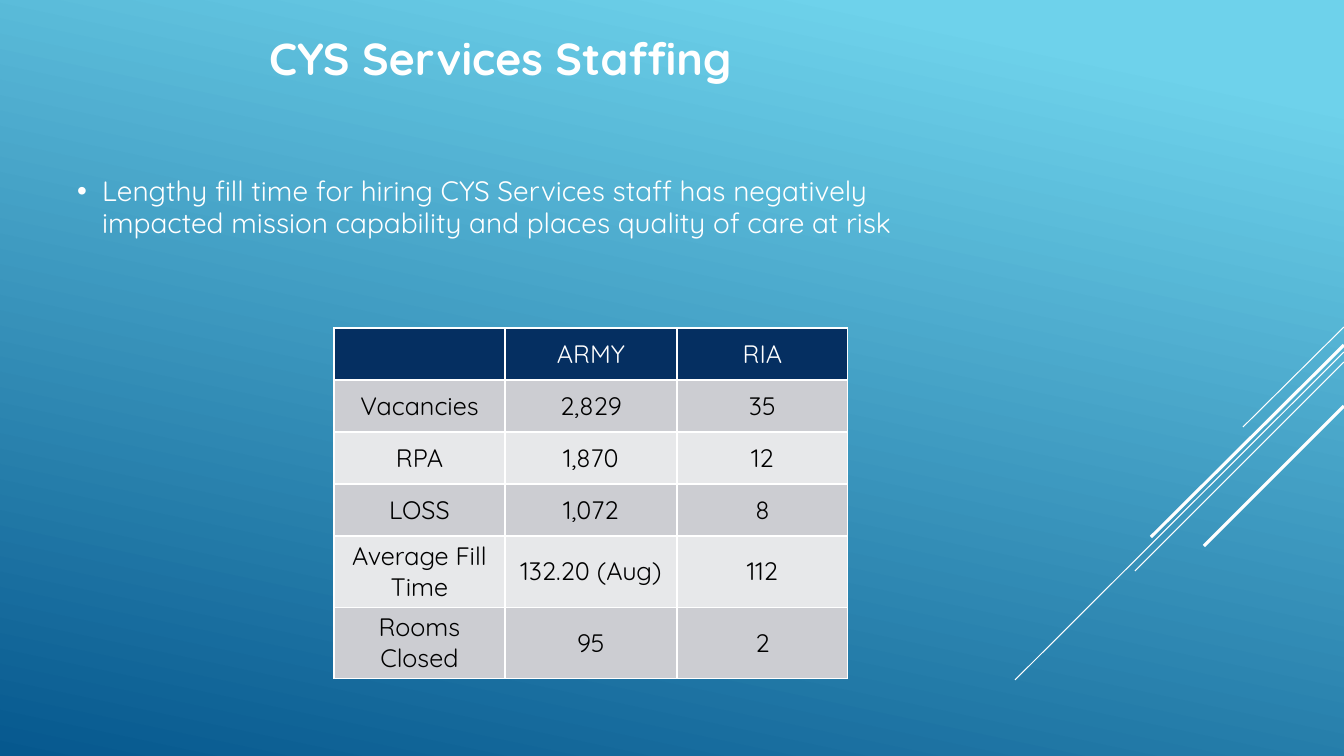
"""Build the staffing slide: title, one bullet, a table and slanted lines."""
from lxml import etree
from pptx import Presentation
from pptx.dml.color import RGBColor
from pptx.enum.shapes import MSO_CONNECTOR
from pptx.enum.text import MSO_ANCHOR, MSO_AUTO_SIZE, PP_ALIGN
from pptx.oxml.ns import qn
from pptx.util import Pt

STRAIGHT = MSO_CONNECTOR.STRAIGHT
MIDDLE, BOTTOM = MSO_ANCHOR.MIDDLE, MSO_ANCHOR.BOTTOM
NO_FIT = MSO_AUTO_SIZE.NONE
CENTER, LEFT = PP_ALIGN.CENTER, PP_ALIGN.LEFT

WHITE = RGBColor(0xFF, 0xFF, 0xFF)
BLACK = RGBColor(0, 0, 0)
NAVY = RGBColor(0x05, 0x2F, 0x61)
GREY = RGBColor(0xCC, 0xCD, 0xD2)
PALE = RGBColor(0xE7, 0xE8, 0xEA)
SKY = RGBColor(0x6E, 0xD2, 0xEB)
DEEP = RGBColor(0x06, 0x58, 0x8E)

SIZE = (1344, 756)
STOPS = [(0.1, SKY), (1, DEEP)]
ANGLE = 258
TITLE = "CYS Services Staffing"
POINT = ("Lengthy fill time for hiring CYS Services staff has negatively "
         "impacted mission capability and places quality of care at risk")
ROWS = [
    ("", "ARMY", "RIA"),
    ("Vacancies", "2,829", "35"),
    ("RPA", "1,870", "12"),
    ("LOSS", "1,072", "8"),
    ("Average Fill Time", "132.20 (Aug)", "112"),
    ("Rooms Closed", "95", "2"),
]
WIDTHS = [171, 172, 171]
HEIGHTS = [52, 52, 52, 52, 71, 71]
TITLE_BOX = (124, 25, 753, 65)
POINT_BOX = (67, 126, 857, 119)
TABLE_AT = (334, 328)
HANG = 25
CELL_PAD = 4
BORDER = 1
LINES = [
    (327, 1243, 427, 0.75),
    (352, 1015, 680, 0.75),
    (362, 1135, 571, 0.75),
    (345, 1151, 537, 2.25),
    (406, 1204, 546, 2.25),
]
FONT = {"name": "Quicksand", "bold": False}
TITLE_FONT = {**FONT, "size": Pt(32), "bold": True}
POINT_FONT = {**FONT, "size": Pt(20)}
CELL_FONT = {**FONT, "size": Pt(18)}


def emu(px):
    """Turn px into EMU."""
    return round(px * 914400 / 100.8)


def assign(obj, values):
    """Set attributes from a dict."""
    for name, value in values.items():
        setattr(obj, name, value)


def write(frame, text, font, color, align):
    """Put one formatted paragraph in a text frame."""
    para = frame.paragraphs[0]
    para.alignment = align
    run = para.add_run()
    run.text = text
    assign(run.font, font)
    run.font.color.rgb = color
    return para


def fill_holder(shape, box, text, font, align, anchor):
    """Move a placeholder and write its text."""
    assign(shape, dict(zip(("left", "top", "width", "height"), map(emu, box))))
    frame = shape.text_frame
    assign(frame, {"word_wrap": True, "auto_size": NO_FIT,
                   "vertical_anchor": anchor})
    return write(frame, text, font, WHITE, align)


def edge(cell):
    """Draw white borders round a cell."""
    props = cell._tc.get_or_add_tcPr()
    for spot, side in enumerate(("a:lnL", "a:lnR", "a:lnT", "a:lnB")):
        line = etree.Element(qn(side), w=str(Pt(BORDER)))
        solid = etree.SubElement(line, qn("a:solidFill"))
        etree.SubElement(solid, qn("a:srgbClr"), val=str(WHITE))
        props.insert(spot, line)


def add_grid(slide):
    """Add the staffing table."""
    spots = (*TABLE_AT, sum(WIDTHS), sum(HEIGHTS))
    grid = slide.shapes.add_table(len(ROWS), len(WIDTHS), *map(emu, spots)).table
    for col, width in zip(grid.columns, WIDTHS):
        col.width = emu(width)
    for r, (row, height) in enumerate(zip(ROWS, HEIGHTS)):
        grid.rows[r].height = emu(height)
        shade = NAVY if r == 0 else (PALE, GREY)[r % 2]
        for c, text in enumerate(row):
            cell = grid.cell(r, c)
            assign(cell, {"vertical_anchor": MIDDLE,
                          "margin_top": emu(CELL_PAD),
                          "margin_bottom": emu(CELL_PAD)})
            cell.fill.solid()
            cell.fill.fore_color.rgb = shade
            edge(cell)
            if text:
                color = BLACK if r else WHITE
                write(cell.text_frame, text, CELL_FONT, color, CENTER)


def add_lines(slide):
    """Add the slanted lines at the right edge."""
    for top, x, y, weight in LINES:
        ends = map(emu, (SIZE[0], top, x, y))
        line = slide.shapes.add_connector(STRAIGHT, *ends)
        line.line.color.rgb = WHITE
        line.line.width = Pt(weight)
        etree.SubElement(line._element.spPr, qn("a:effectLst"))


def main():
    """Build and save the slide."""
    deck = Presentation()
    deck.slide_width, deck.slide_height = map(emu, SIZE)
    slide = deck.slides.add_slide(deck.slide_layouts[1])
    back = slide.background.fill
    back.gradient()
    back.gradient_angle = ANGLE
    for stop, (place, color) in zip(back.gradient_stops, STOPS):
        stop.position = place
        stop.color.rgb = color
    add_lines(slide)
    title, body = slide.placeholders
    fill_holder(title, TITLE_BOX, TITLE, TITLE_FONT, CENTER, MIDDLE)
    para = fill_holder(body, POINT_BOX, POINT, POINT_FONT, LEFT, BOTTOM)
    assign(para, {"line_spacing": 0.95, "space_before": Pt(0)})
    props = para._p.get_or_add_pPr()
    props.set("marL", str(emu(HANG)))
    props.set("indent", str(-emu(HANG)))
    etree.SubElement(props, qn("a:buChar"), char="•")
    add_grid(slide)
    deck.save("out.pptx")


if __name__ == "__main__":
    main()
